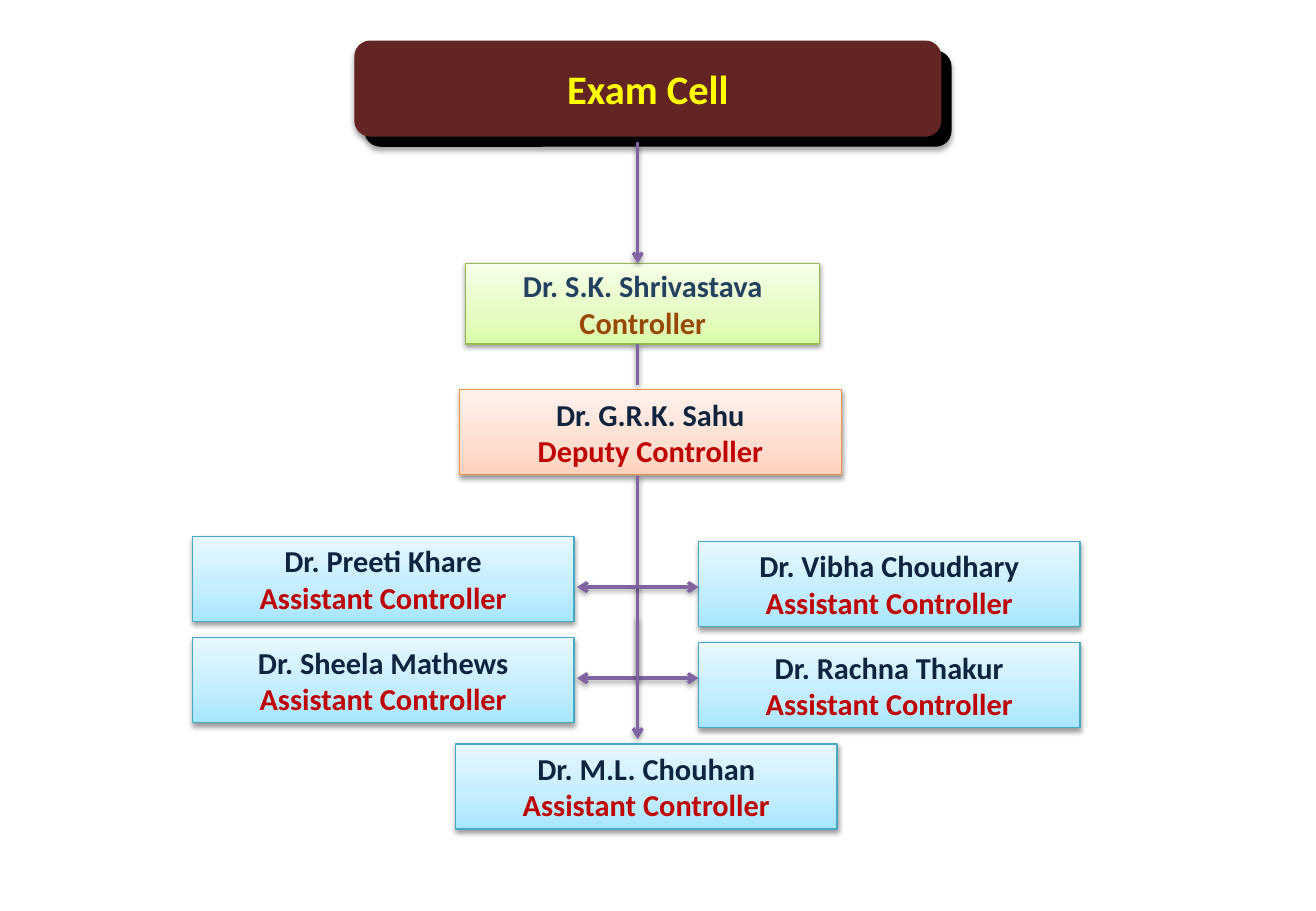
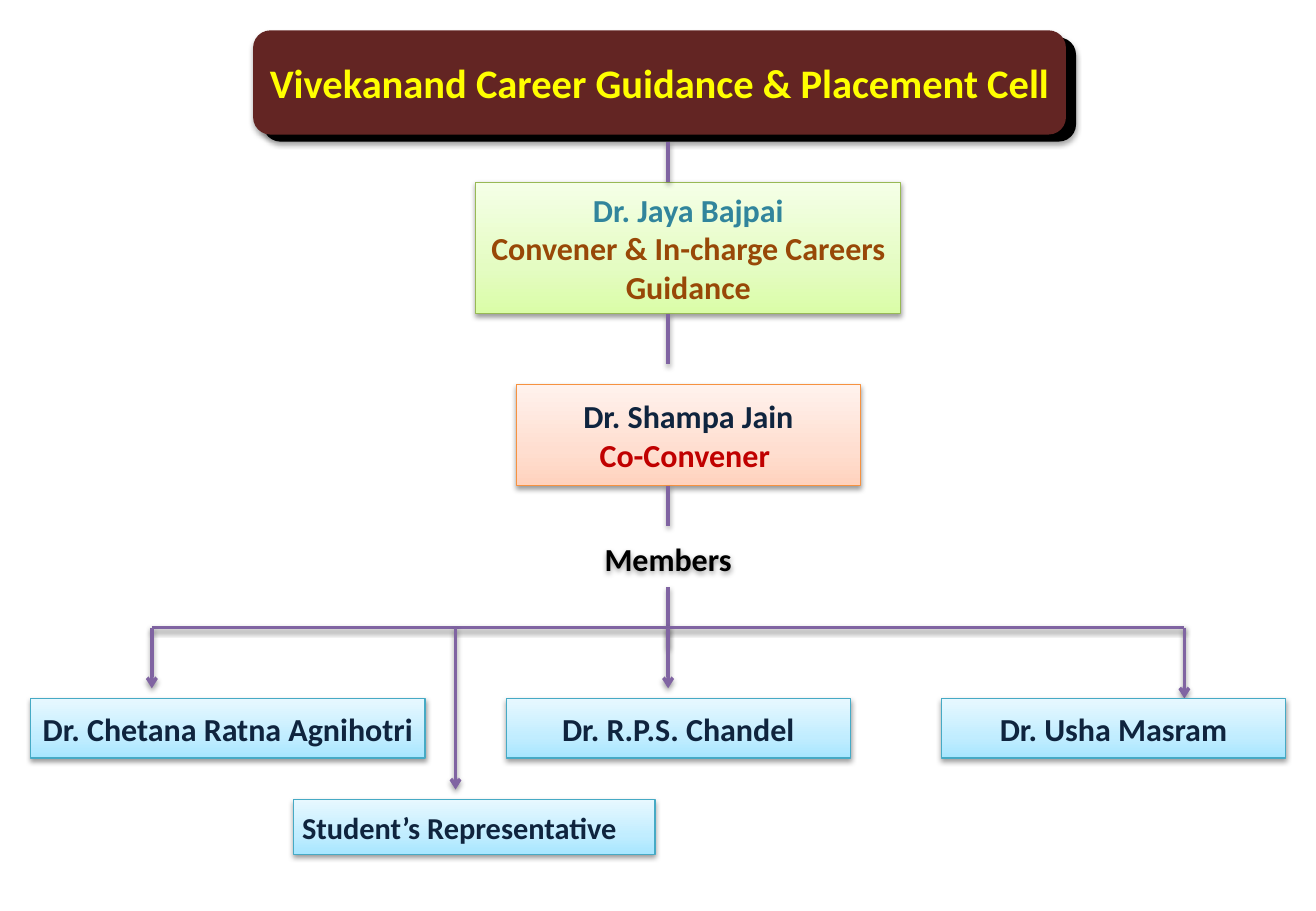
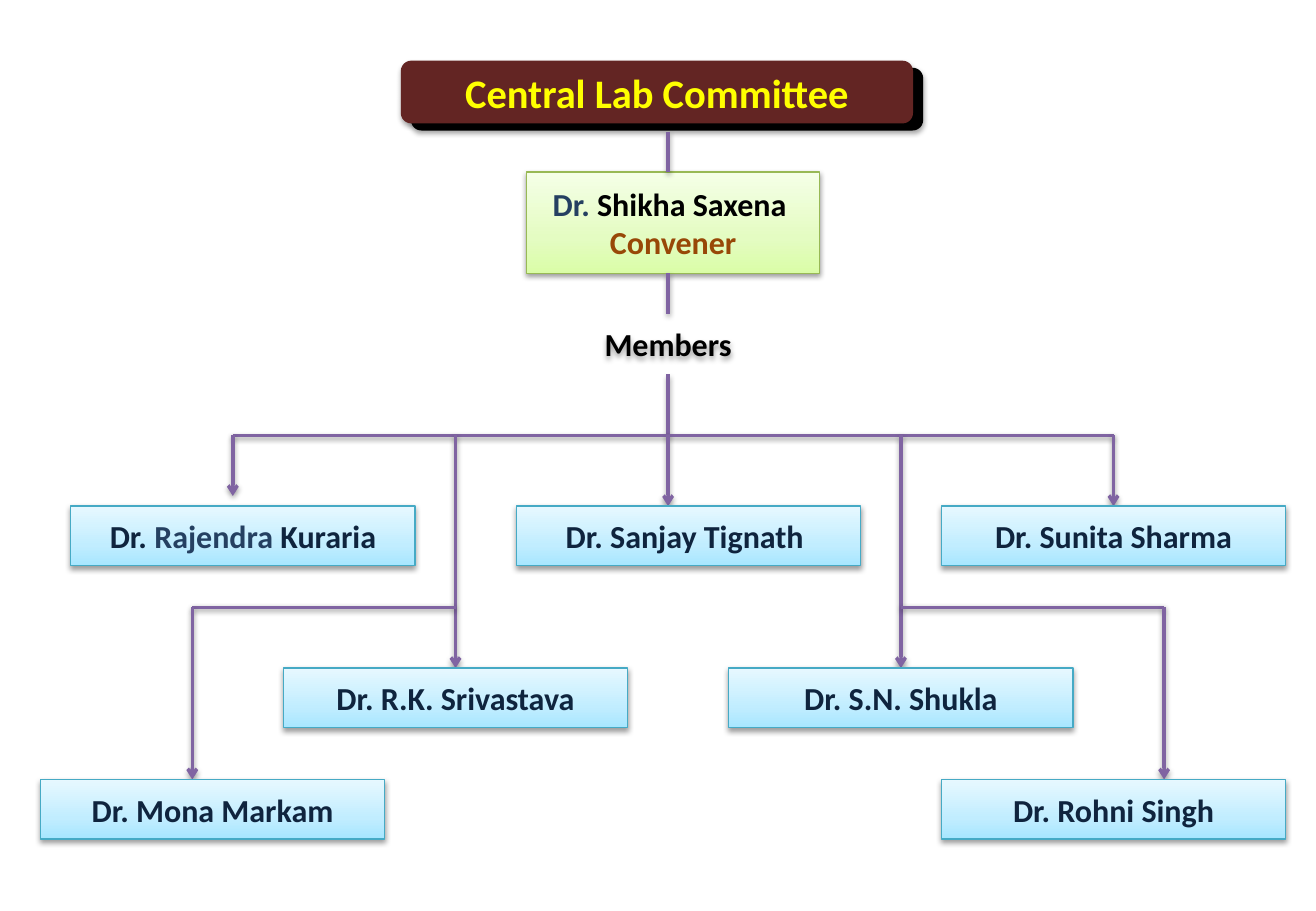
"""Draw three committee charts on a grid of 130 columns and 90 rows."""
from dataclasses import dataclass

from pptx import Presentation
from pptx.dml.color import RGBColor
from pptx.enum.shapes import MSO_CONNECTOR, MSO_SHAPE
from pptx.enum.text import MSO_ANCHOR, PP_ALIGN
from pptx.oxml import parse_xml
from pptx.oxml.ns import nsdecls
from pptx.util import Emu, Inches, Pt

COLS, ROWS, CELL = 130, 90, 76200


@dataclass(frozen=True)
class Theme:
    font: str = "Calibri"
    head: int = 24
    body: int = 19
    small: int = 18
    edge: float = 0.75
    wire: float = 2
    black: str = "000000"
    maroon: str = "632523"
    yellow: str = "FFFF00"
    purple: str = "8064A2"
    navy: str = "0F243E"
    blue: str = "254061"
    teal: str = "31859C"
    brown: str = "984807"
    red: str = "C00000"
    green: tuple = ("DAFDA7", "E4FCC2", "F5FFE7", "98B955")
    peach: tuple = ("FFD2BD", "FFDED0", "FFF2ED", "F69240")
    sky: tuple = ("A7E6FF", "C1EDFF", "E7F8FF", "46AAC5")


T = Theme()


def rgb(code):
    return RGBColor.from_string(code)


def grid(*cells):
    return [Emu(round(cell * CELL)) for cell in cells]


def write(shape, rows, size=T.body, align=PP_ALIGN.CENTER):
    frame = shape.text_frame
    frame.word_wrap = True
    frame.vertical_anchor = MSO_ANCHOR.MIDDLE
    frame.margin_left = frame.margin_right = Inches(0.07)
    frame.margin_top = frame.margin_bottom = Inches(0.04)
    for i, row in enumerate(rows):
        para = frame.paragraphs[0] if i == 0 else frame.add_paragraph()
        para.alignment = align
        for text, color in row:
            run = para.add_run()
            run.text = text
            run.font.name = T.font
            run.font.size = Pt(size)
            run.font.bold = True
            run.font.color.rgb = rgb(color)


def shade(shape, alpha=38, dist=20000):
    shape._element.spPr.append(parse_xml(
        f'<a:effectLst {nsdecls("a")}><a:outerShdw blurRad="40000" '
        f'dist="{dist}" dir="5400000" rotWithShape="0">'
        f'<a:srgbClr val="{T.black}"><a:alpha val="{alpha * 1000}"/>'
        '</a:srgbClr></a:outerShdw></a:effectLst>'))


def blend(shape, colors):
    stops = "".join(
        f'<a:gs pos="{pos * 1000}"><a:srgbClr val="{color}"/></a:gs>'
        for pos, color in zip((0, 35, 100), colors))
    shape._element.spPr.append(parse_xml(
        f'<a:gradFill {nsdecls("a")} rotWithShape="1"><a:gsLst>{stops}'
        '</a:gsLst><a:lin ang="16200000" scaled="0"/></a:gradFill>'))


class Chart:
    def __init__(self):
        self.deck = Presentation()
        self.deck.slide_width, self.deck.slide_height = grid(COLS, ROWS)

    def page(self):
        self.shapes = self.deck.slides.add_slide(
            self.deck.slide_layouts[6]).shapes

    def panel(self, color, x, y, w, h):
        panel = self.shapes.add_shape(
            MSO_SHAPE.ROUNDED_RECTANGLE, *grid(x, y, w, h))
        panel.fill.solid()
        panel.fill.fore_color.rgb = rgb(color)
        panel.line.fill.background()
        shade(panel, alpha=35, dist=23000)
        return panel

    def title(self, text, x, y, w, h, drop=0.7):
        self.panel(T.black, x + 1, y + drop, w, h)
        front = self.panel(T.maroon, x, y, w, h)
        write(front, [[(text, T.yellow)]], size=T.head)

    def box(self, rows, x, y, w=34, h=5.9, tone=T.sky, **style):
        box = self.shapes.add_shape(MSO_SHAPE.RECTANGLE, *grid(x, y, w, h))
        blend(box, tone[:3])
        box.line.color.rgb = rgb(tone[3])
        box.line.width = Pt(T.edge)
        shade(box)
        write(box, rows, **style)

    def names(self, spots):
        for name, x, y in spots:
            self.box([[(name, T.navy)]], x, y)

    def label(self, text, x, y, w=30, h=5.9):
        label = self.shapes.add_textbox(*grid(x, y, w, h))
        shade(label)
        write(label, [[(text, T.black)]])

    def line(self, x, y, to_x, to_y, arrow=False):
        line = self.shapes.add_connector(
            MSO_CONNECTOR.STRAIGHT, *grid(x, y, to_x, to_y))
        line.line.color.rgb = rgb(T.purple)
        line.line.width = Pt(T.wire)
        if arrow:
            line.line._get_or_add_ln().append(
                parse_xml(f'<a:tailEnd {nsdecls("a")} type="arrow"/>'))
        shade(line)

    def drops(self, y, ends):
        for x, end in ends:
            self.line(x, y, x, end, arrow=True)

    def stems(self, x, spans):
        for top, end in spans:
            self.line(x, top, x, end)


def exam(chart):
    chart.page()
    chart.title("Exam Cell", 35, 4, 58, 9.5, drop=1)
    chart.box([[("Dr. S.K. Shrivastava", T.blue)], [("Controller", T.brown)]],
              46, 26, 35, 8, tone=T.green, size=T.small)
    wide, tall = 37.7, 8.4
    chart.box([[("Dr. G.R.K. Sahu", T.navy)], [("Deputy Controller", T.red)]],
              45.4, 38.5, wide, tall, tone=T.peach, size=T.small)
    for name, x, y in (("Dr. Preeti Khare", 19, 53),
                       ("Dr. Sheela Mathews", 19, 63),
                       ("Dr. Vibha Choudhary", 69, 53.5),
                       ("Dr. Rachna Thakur", 69, 63.5),
                       ("Dr. M.L. Chouhan", 45, 73.5)):
        chart.box([[(name, T.navy)], [("Assistant Controller", T.red)]],
                  x, y, wide, tall, size=T.small)
    mid = 63
    chart.drops(14, [(mid, 26)])
    chart.stems(mid, [(34, 38), (47, 67)])
    for y in (58, 67):
        for x in (57, 69):
            chart.line(mid, y, x, y, arrow=True)
    chart.drops(61, [(mid, 73)])


def career(chart):
    chart.page()
    chart.title("Vivekanand Career Guidance & Placement Cell ",
                25, 3, 80.3, 10.3)
    chart.box([[("Dr. Jaya Bajpai", T.teal)],
               [("Convener & In-charge Careers Guidance", T.brown)]],
              47, 18, 42, 13, tone=T.green)
    chart.box([[("Dr. Shampa Jain", T.navy)], [("Co-Convener ", T.red)]],
              51, 38, 34, 10, tone=T.peach)
    chart.label("Members", 51, 52.2)
    chart.stems(66, [(14, 18), (31, 36), (48, 52), (58, 64)])
    chart.line(15, 62, 117, 62)
    chart.drops(62, [(15, 68), (45, 78), (66, 68), (117, 69)])
    chart.box([[("Dr. Chetana Ratna Agnihotri", T.navy)]], 3, 69, w=39)
    chart.names([("Dr. R.P.S. Chandel", 50, 69),
                 ("Dr. Usha Masram", 93, 69)])
    chart.box([[("Student’s Representative", T.navy)]], 29, 79, 35.7, 5.4,
              size=T.small, align=PP_ALIGN.LEFT)


def lab(chart):
    chart.page()
    chart.title("Central Lab Committee", 39.6, 6, 50.6, 6.2)
    chart.box([[("Dr. ", T.blue), ("Shikha Saxena ", T.black)],
               [("Convener", T.brown)]], 52, 17, 29, 10, tone=T.green)
    chart.label("Members", 51, 31)
    chart.stems(66, [(13, 17), (27, 31), (37, 43)])
    chart.line(23, 43, 110, 43)
    chart.drops(43, [(23, 49), (45, 66), (66, 50), (89, 66), (110, 50)])
    for x, end in ((45, 19), (89, 115)):
        chart.line(x, 60, end, 60)
        chart.drops(60, [(end, 77)])
    chart.box([[("Dr. ", T.navy), ("Rajendra ", T.blue),
                ("Kuraria", T.navy)]], 7, 50)
    chart.names([("Dr. Sanjay Tignath ", 51, 50),
                 ("Dr. Sunita Sharma", 93, 50),
                 ("Dr. R.K. Srivastava", 28, 66),
                 ("Dr. S.N. Shukla", 72, 66),
                 ("Dr. Mona Markam", 4, 77),
                 ("Dr. Rohni Singh", 93, 77)])


def main():
    chart = Chart()
    for draw in (exam, career, lab):
        draw(chart)
    chart.deck.save("out.pptx")


if __name__ == "__main__":
    main()
